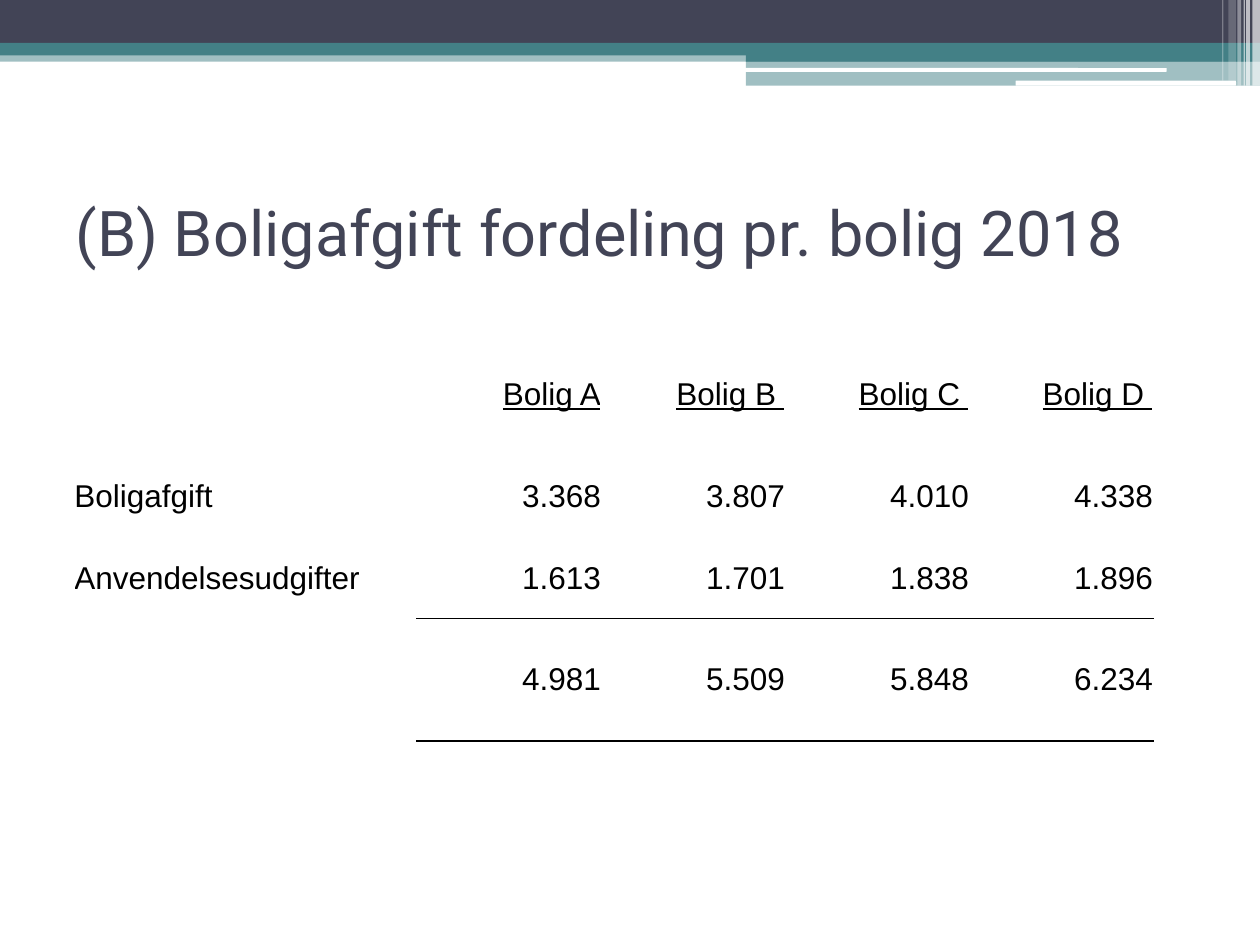
from lxml import etree
from pptx import Presentation
from pptx.dml.color import RGBColor
from pptx.enum.shapes import MSO_SHAPE
from pptx.enum.text import MSO_ANCHOR, MSO_AUTO_SIZE, PP_ALIGN
from pptx.oxml.ns import qn
from pptx.util import Inches, Pt

RECT, ROUND = MSO_SHAPE.RECTANGLE, MSO_SHAPE.ROUNDED_RECTANGLE
MIDDLE = MSO_ANCHOR.MIDDLE
LEFT, RIGHT = PP_ALIGN.LEFT, PP_ALIGN.RIGHT
NAVY, TEAL, WHITE, BLACK = "424456", "438086", "FFFFFF", "000000"

# Content
TITLE = "(B) Boligafgift fordeling pr. bolig 2018"
ROWS = [
    ("", "Bolig A", "Bolig B ", "Bolig C ", "Bolig D "),
    ("Boligafgift", "3.368", "3.807", "4.010", "4.338"),
    ("Anvendelsesudgifter", "1.613", "1.701", "1.838", "1.896"),
    ("", "4.981", "5.509", "5.848", "6.234"),
]
COLUMN_WIDTHS = [1.68, 1.04] + [1.46] * 4
ROW_HEIGHTS = [0.96, 0.67, 0.63, 0.97]
# Row number: rules above and below its amounts, in points
RULES = {2: {"lnB": 0.5}, 3: {"lnT": 0.5, "lnB": 1}}

# Header band: shape, left, top, width, height, colour, opacity in percent
BANDS = [
    (RECT, 0, 0.4, 10, 0.09, TEAL, 50),
    (RECT, 0, 0, 10, 0.34, NAVY, 100),
    (RECT, 0, 0.34, 10, 0.1, TEAL, 100),
    (RECT, 5.92, 0.39, 4.08, 0.1, TEAL, 100),
    (RECT, 5.92, 0.48, 4.08, 0.2, TEAL, 50),
    (ROUND, 5.91, 0.54, 3.35, 0.03, WHITE, 100),
    (ROUND, 8.06, 0.64, 1.75, 0.04, WHITE, 100),
]
# Stripes at the right end: left, width, height, opacity
STRIPES = [
    (9.94, 0.06, 0.68, 65),
    (9.89, 0.03, 0.68, 65),
    (9.87, 0.01, 0.68, 60),
    (9.82, 0.03, 0.68, 40),
    (9.75, 0.06, 0.64, 20),
    (9.7, 0.01, 0.64, 30),
]


def paint(fill, color, opacity=100):
    fill.solid()
    fill.fore_color.rgb = RGBColor.from_string(color)
    if opacity < 100:
        tint = fill._xPr.find(qn("a:solidFill"))[0]
        etree.SubElement(tint, qn("a:alpha"), val=str(opacity * 1000))


def add_band(page, kind, left, top, width, height, color, opacity):
    band = page.shapes.add_shape(
        kind, Inches(left), Inches(top), Inches(width), Inches(height))
    band.shadow.inherit = False
    band.line.fill.background()
    paint(band.fill, color, opacity)


def write(para, text, size, font, color, align, underline=False):
    para.alignment = align
    span = para.add_run()
    span.text = text
    span.font.size = Pt(size)
    span.font.name = font
    span.font.underline = underline
    span.font.color.rgb = RGBColor.from_string(color)


def add_rule(cell, side, points):
    line = etree.SubElement(
        cell._tc.get_or_add_tcPr(), qn(f"a:{side}"), w=str(Pt(points)))
    fill = etree.SubElement(line, qn("a:solidFill"))
    etree.SubElement(fill, qn("a:srgbClr"), val=BLACK)


def add_title(page):
    title = page.shapes.title
    title.left, title.top = Inches(0.5), Inches(1.25)
    title.width, title.height = Inches(9), Inches(1.17)
    frame = title.text_frame
    frame.auto_size = MSO_AUTO_SIZE.NONE
    frame.vertical_anchor = MIDDLE
    write(frame.paragraphs[0], TITLE, 36, "Roboto", NAVY, LEFT)


def add_fee_table(page):
    table = page.shapes.add_table(
        len(ROWS), len(COLUMN_WIDTHS), Inches(0.59), Inches(2.65),
        Inches(sum(COLUMN_WIDTHS)), Inches(sum(ROW_HEIGHTS))).table
    table.first_row = table.horz_banding = False
    for column, width in zip(table.columns, COLUMN_WIDTHS):
        column.width = Inches(width)
    for row, height in zip(table.rows, ROW_HEIGHTS):
        row.height = Inches(height)

    for r, (label, *amounts) in enumerate(ROWS):
        if label:
            table.cell(r, 0).merge(table.cell(r, 1))
        for c, text in enumerate([label, ""] + amounts):
            cell = table.cell(r, c)
            cell.margin_left = cell.margin_right = 0
            cell.margin_top = cell.margin_bottom = 0
            cell.vertical_anchor = MIDDLE
            if c >= 2:
                for side, points in RULES.get(r, {}).items():
                    add_rule(cell, side, points)
            cell.fill.background()
            if text:
                write(cell.text_frame.paragraphs[0], text, 18, "Arial", BLACK,
                      RIGHT if c else LEFT, underline=r == 0)


def main():
    deck = Presentation()
    deck.slide_width, deck.slide_height = Inches(10), Inches(7.5)
    page = deck.slides.add_slide(deck.slide_layouts[5])  # title only
    paint(page.background.fill, WHITE)
    for band in BANDS:
        add_band(page, *band)
    for left, width, height, opacity in STRIPES:
        add_band(page, RECT, left, 0, width, height, WHITE, opacity)
    add_title(page)
    add_fee_table(page)
    deck.save("out.pptx")


if __name__ == "__main__":
    main()
